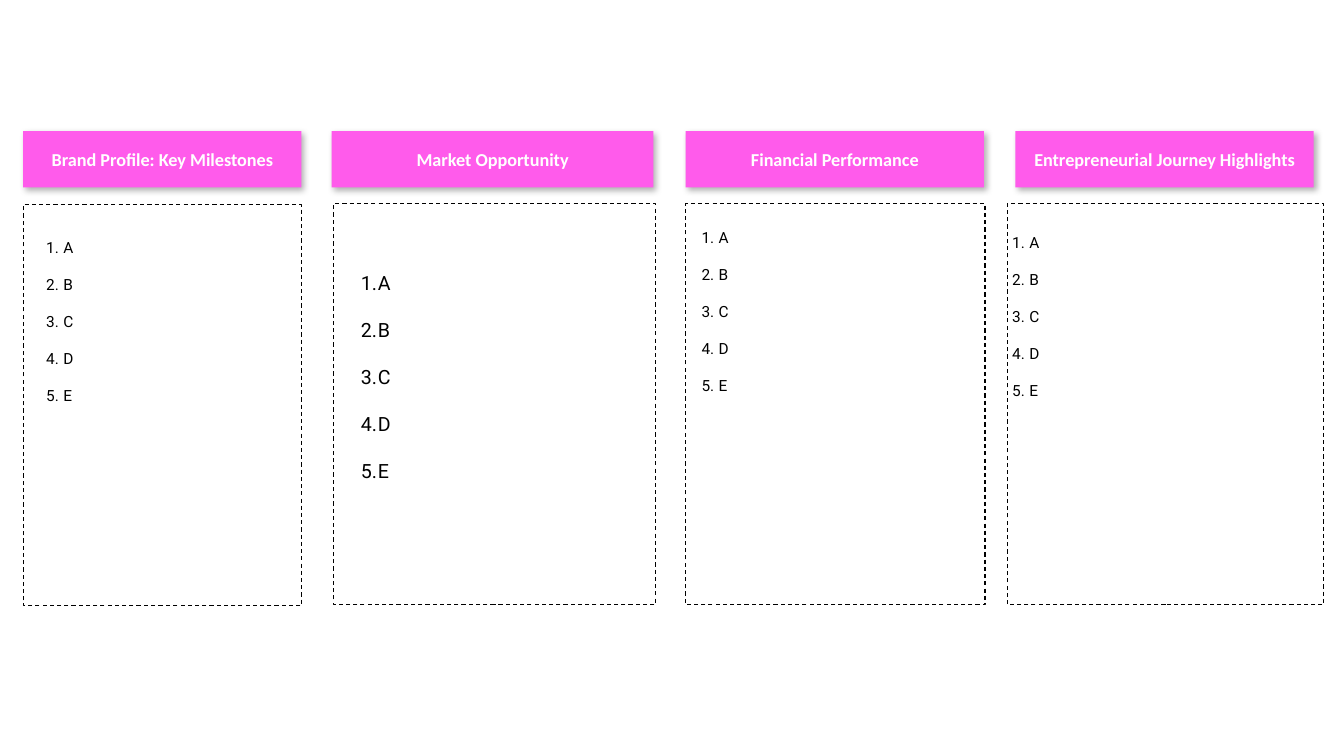
from lxml import etree
from pptx import Presentation
from pptx import util as u
from pptx.dml.color import RGBColor
from pptx.enum import dml, shapes, text
from pptx.oxml import ns

PX = 9144
PINK, WHITE, BLACK = "FF5BEB", "FFFFFF", "000000"


def px(*lengths):
    return [u.Emu(length * PX) for length in lengths]


def rgb(value):
    return RGBColor.from_string(value)


def add_xml(parent, tag, **attributes):
    return etree.SubElement(parent, ns.qn(tag), attributes)


class Board:
    """Holds the style and the current slide of the column board."""

    heading_font = {"name": "Calibri", "size": u.Pt(13), "bold": True}
    header_top, header_height, panel_height = 130, 56, 398

    def __init__(self, deck):
        self.slide = deck.slides.add_slide(deck.slide_layouts[6])

    def set_font(self, font, style, colour):
        for key, value in style.items():
            setattr(font, key, value)
        font.color.rgb = rgb(colour)

    def rectangle(self, *box):
        shape = self.slide.shapes.add_shape(shapes.MSO_SHAPE.RECTANGLE, *px(*box))
        shape.shadow.inherit = False
        return shape

    def header(self, left, width, title):
        banner = self.rectangle(left, self.header_top, width, self.header_height)
        banner.fill.solid()
        banner.fill.fore_color.rgb = rgb(PINK)
        banner.line.fill.background()
        effects = banner._element.spPr.find(ns.qn("a:effectLst"))
        shadow = add_xml(effects, "a:outerShdw", blurRad=str(u.Pt(4.5)),
                         dist=str(u.Pt(2.6)), dir=str(53 * 60000),
                         algn="tl", rotWithShape="0")
        tint = add_xml(shadow, "a:srgbClr", val=BLACK)
        add_xml(tint, "a:alpha", val="30000")
        frame = banner.text_frame
        frame.word_wrap = True
        frame.vertical_anchor = text.MSO_ANCHOR.MIDDLE
        heading = frame.paragraphs[0]
        heading.text = title
        heading.alignment = text.PP_ALIGN.CENTER
        self.set_font(heading.runs[0].font, self.heading_font, WHITE)

    def panel(self, left, top, width):
        outline = self.rectangle(left, top, width, self.panel_height)
        outline.fill.background()
        outline.line.color.rgb = rgb(BLACK)
        outline.line.width = u.Pt(0.75)
        outline.line.dash_style = dml.MSO_LINE.DASH

    def numbered(self, box, size, wrap, items):
        frame = self.slide.shapes.add_textbox(*px(*box)).text_frame
        frame.word_wrap = wrap
        if not wrap:
            frame.auto_size = text.MSO_AUTO_SIZE.SHAPE_TO_FIT_TEXT
        for index, item in enumerate(items):
            entry = frame.add_paragraph() if index else frame.paragraphs[0]
            entry.text = item
            entry.line_spacing = 2.0
            props = entry._p.get_or_add_pPr()
            props.set("marL", str(17 * PX))
            props.set("indent", str(-25 * PX))
            add_xml(add_xml(props, "a:buClr"), "a:srgbClr", val=BLACK)
            add_xml(props, "a:buFont", typeface="+mj-lt")
            add_xml(props, "a:buAutoNum", type="arabicPeriod")
            style = {"name": "Roboto", "size": u.Pt(size)}
            self.set_font(entry.runs[0].font, style, BLACK)


def main():
    deck = Presentation()
    deck.slide_width, deck.slide_height = u.Inches(13.33), u.Inches(7.5)
    board = Board(deck)
    columns = [
        ("Brand Profile: Key Milestones", (23, 276), (23, 203, 276),
         (36, 213, 257, 306), 11, True),
        ("Market Opportunity", (329, 319), (331, 202, 319),
         (348, 240, 58, 269), 14, False),
        ("Financial Performance", (680, 296), (680, 202, 297),
         (686, 203, 276, 306), 11, True),
        ("Entrepreneurial Journey Highlights", (1007, 296), (999, 202, 314),
         (994, 208, 311, 370), 11, True),
    ]
    for title, header, panel, points, size, wrap in columns:
        board.header(*header, title)
        board.panel(*panel)
        board.numbered(points, size, wrap, "ABCDE")
    deck.save("out.pptx")


if __name__ == "__main__":
    main()
